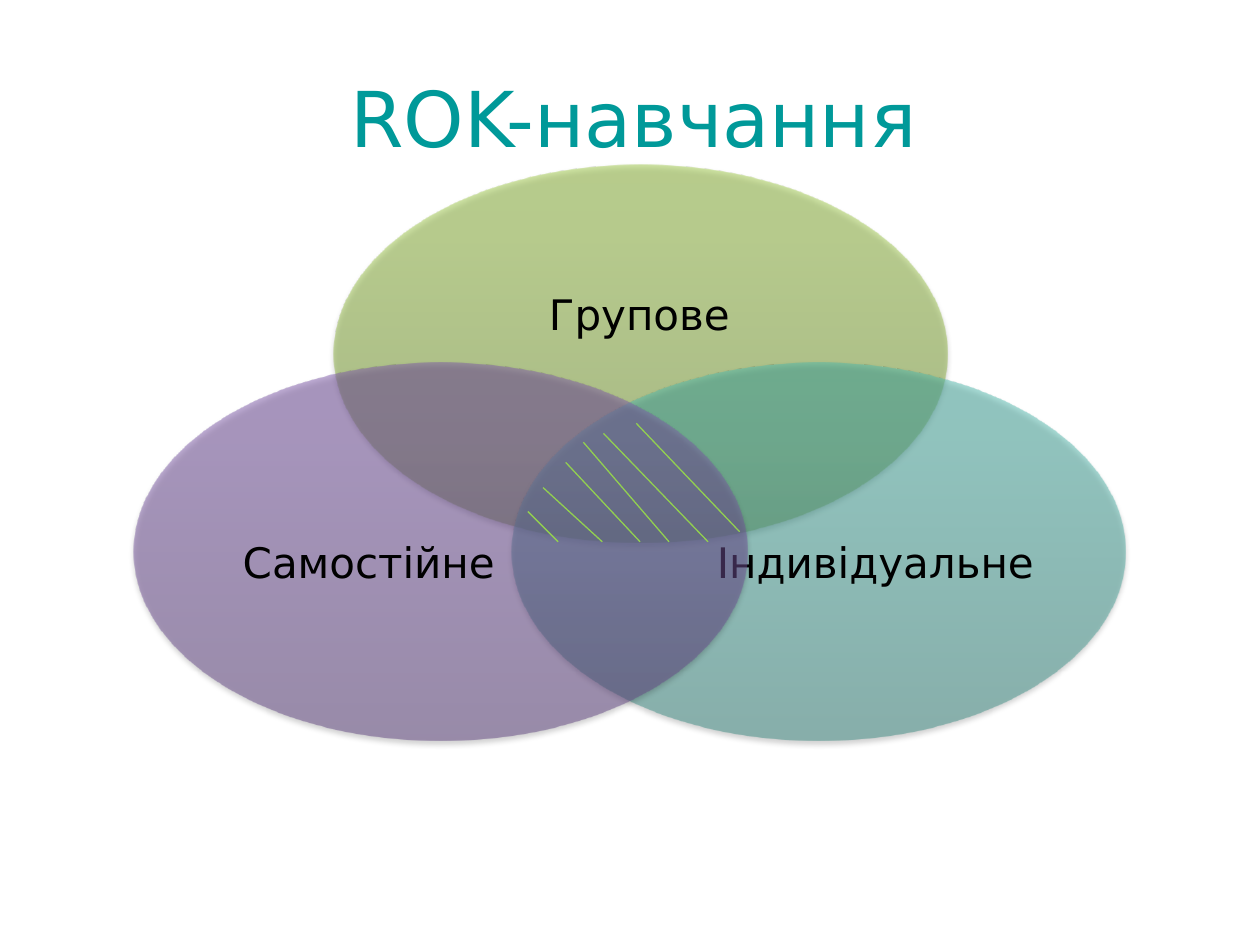
from lxml.etree import SubElement
from pptx import Presentation
from pptx.dml.color import RGBColor
from pptx.enum.shapes import MSO_CONNECTOR, MSO_SHAPE
from pptx.enum.text import MSO_ANCHOR, PP_ALIGN
from pptx.oxml.ns import qn
from pptx.util import Inches, Pt

TEAL = RGBColor(0x00, 0x99, 0x99)
BLACK = RGBColor(0x00, 0x00, 0x00)
LIME = RGBColor(0x92, 0xD0, 0x50)
GREEN_STOPS = (RGBColor(0x77, 0x97, 0x37), RGBColor(0x9B, 0xC3, 0x48), RGBColor(0x9D, 0xC7, 0x46))
AQUA_STOPS = (RGBColor(0x3D, 0x8B, 0x83), RGBColor(0x50, 0xB5, 0xAA), RGBColor(0x4E, 0xB8, 0xAC))
PURPLE_STOPS = (RGBColor(0x5F, 0x44, 0x80), RGBColor(0x7B, 0x58, 0xA6), RGBColor(0x7C, 0x57, 0xA8))

STOP_POSITIONS = (0, 80, 100)
CIRCLE_SIZE = (4.87, 3)

# Circle position, gradient colours, label and label box, from back to front
CIRCLES = [
    ((2.65, 1.31), GREEN_STOPS, "Групове", (3.29, 1.84, 3.57, 1.35)),
    ((4.06, 2.88), AQUA_STOPS, "Індивідуальне ", (5.54, 3.66, 2.92, 1.65)),
    ((1.06, 2.88), PURPLE_STOPS, "Самостійне ", (1.52, 3.66, 2.92, 1.65)),
]

# Start and end of each line hatching the common area
HATCHING = [
    (4.19, 4.06, 4.43, 4.3),
    (4.31, 3.87, 4.78, 4.3),
    (4.63, 3.51, 5.31, 4.3),
    (5.05, 3.36, 5.87, 4.22),
    (4.79, 3.44, 5.62, 4.3),
    (4.49, 3.67, 5.08, 4.3),
]


def add_color(parent, color, opacity):
    element = SubElement(parent, qn("a:srgbClr"), val=str(color))
    SubElement(element, qn("a:alpha"), val=str(opacity * 1000))


class VennSlide:
    font = "DejaVu Sans"

    def __init__(self, presentation):
        self.slide = presentation.slides.add_slide(presentation.slide_layouts[6])

    def add_circle(self, position, colors):
        """Add a half-transparent ellipse, darkest at its foot, with a soft shadow."""
        left, top, width, height = map(Inches, position + CIRCLE_SIZE)
        shape = self.slide.shapes.add_shape(MSO_SHAPE.OVAL, left, top, width, height)
        shape.fill.gradient()
        shape.fill.gradient_angle = 90
        stops = shape._element.spPr.find(qn("a:gradFill")).find(qn("a:gsLst"))
        for stop in list(stops):
            stops.remove(stop)
        for place, color in zip(STOP_POSITIONS, colors):
            add_color(SubElement(stops, qn("a:gs"), pos=str(place * 1000)), color, 50)
        shape.line.fill.background()
        shape.shadow.inherit = False
        effects = shape._element.spPr.find(qn("a:effectLst"))
        shadow = SubElement(effects, qn("a:outerShdw"), blurRad=str(Pt(3.1)),
                            dist=str(Pt(1.8)), dir="5400000", rotWithShape="0")
        add_color(shadow, BLACK, 35)

    def add_text(self, text, box, size, color, margins=(0.1, 0.05), spacing=1.0):
        frame = self.slide.shapes.add_textbox(*map(Inches, box)).text_frame
        frame.word_wrap = True
        frame.vertical_anchor = MSO_ANCHOR.MIDDLE
        frame.margin_left = frame.margin_right = Inches(margins[0])
        frame.margin_top = frame.margin_bottom = Inches(margins[1])
        paragraph = frame.paragraphs[0]
        paragraph.alignment = PP_ALIGN.CENTER
        paragraph.line_spacing = spacing
        run = paragraph.add_run()
        run.text = text
        run.font.name = self.font
        run.font.size = Pt(size)
        run.font.color.rgb = color

    def add_line(self, ends):
        line = self.slide.shapes.add_connector(MSO_CONNECTOR.STRAIGHT, *map(Inches, ends))
        line.line.color.rgb = LIME
        line.line.width = Pt(0.75)
        SubElement(line._element.spPr, qn("a:effectLst"))


def main():
    presentation = Presentation()
    presentation.slide_width = Inches(10)
    presentation.slide_height = Inches(7.5)
    venn = VennSlide(presentation)
    for position, colors, label, box in CIRCLES:
        venn.add_circle(position, colors)
        venn.add_text(label, box, 24, BLACK, margins=(0, 0), spacing=0.9)
    venn.add_text("ROK-навчання", (0.42, 0.3, 9.22, 1.25), 44, TEAL)
    for ends in HATCHING:
        venn.add_line(ends)
    presentation.save("out.pptx")


if __name__ == "__main__":
    main()
